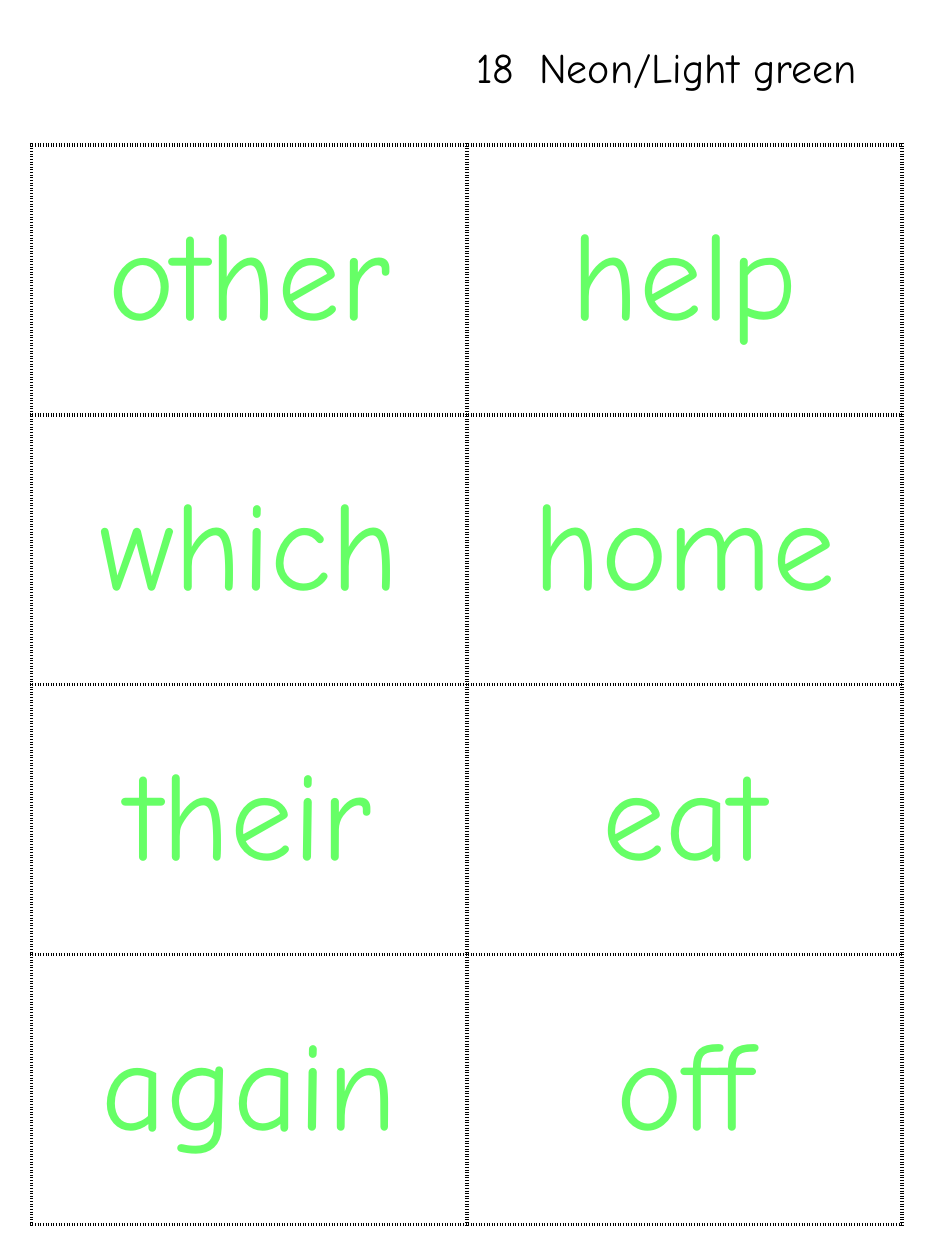
from lxml import etree
from pptx import Presentation
from pptx.dml.color import RGBColor
from pptx.enum.text import MSO_ANCHOR, MSO_AUTO_SIZE, PP_ALIGN
from pptx.oxml.ns import qn
from pptx.util import Inches, Pt

LEFT, CENTER = PP_ALIGN.LEFT, PP_ALIGN.CENTER
TOP, MIDDLE = MSO_ANCHOR.TOP, MSO_ANCHOR.MIDDLE
FIT_SHAPE = MSO_AUTO_SIZE.SHAPE_TO_FIT_TEXT

BLACK = RGBColor(0x00, 0x00, 0x00)
NEON_GREEN = RGBColor(0x66, 0xFF, 0x66)
FONT = "Comic Neue"
TITLE_ONLY_LAYOUT = 5

WORD_ROWS = [
    ("other", "help"),
    ("which", "home"),
    ("their", "eat"),
    ("again", "off"),
]


def write_text(text_frame, text, size, color, align=LEFT):
    """Write one formatted paragraph."""
    paragraph = text_frame.paragraphs[0]
    paragraph.alignment = align
    run = paragraph.add_run()
    run.text = text
    run.font.name = FONT
    run.font.size = Pt(size)
    run.font.color.rgb = color


def dot_borders(cell, color, width):
    """Give a cell dotted lines on all four sides."""
    properties = cell._tc.get_or_add_tcPr()
    for position, side in enumerate(("a:lnL", "a:lnR", "a:lnT", "a:lnB")):
        line = etree.Element(qn(side), w=str(Pt(width)))
        fill = etree.SubElement(line, qn("a:solidFill"))
        etree.SubElement(fill, qn("a:srgbClr"), val=str(color))
        etree.SubElement(line, qn("a:prstDash"), val="sysDot")
        properties.insert(position, line)


def add_heading(slide, left, top, width, height):
    """Place the set number and colour name in the title."""
    title = slide.shapes.title
    title.left, title.top, title.width, title.height = left, top, width, height
    text_frame = title.text_frame
    text_frame.word_wrap = False
    text_frame.auto_size = FIT_SHAPE
    text_frame.vertical_anchor = TOP
    write_text(text_frame, "18\tNeon/Light green", size=24, color=BLACK)


def add_word_cards(slide, left, top, width, height):
    """Place the grid of cut-out word cards."""
    row_count, column_count = len(WORD_ROWS), len(WORD_ROWS[0])
    table = slide.shapes.add_table(
        row_count, column_count, left, top, width, height
    ).table
    table.first_row = False
    table.horz_banding = False
    for row_index, words in enumerate(WORD_ROWS):
        for column_index, word in enumerate(words):
            cell = table.cell(row_index, column_index)
            cell.fill.background()
            cell.vertical_anchor = MIDDLE
            dot_borders(cell, BLACK, width=2.25)
            write_text(cell.text_frame, word, size=72, color=NEON_GREEN, align=CENTER)


def main():
    presentation = Presentation()
    presentation.slide_width = Inches(7.5)
    presentation.slide_height = Inches(10)
    layout = presentation.slide_layouts[TITLE_ONLY_LAYOUT]
    slide = presentation.slides.add_slide(layout)

    add_heading(slide, Inches(3.68), Inches(0.28), Inches(3.48), Inches(0.5))
    add_word_cards(slide, Inches(0.25), Inches(1.15), Inches(6.91), Inches(8.57))

    presentation.save("out.pptx")


if __name__ == "__main__":
    main()
